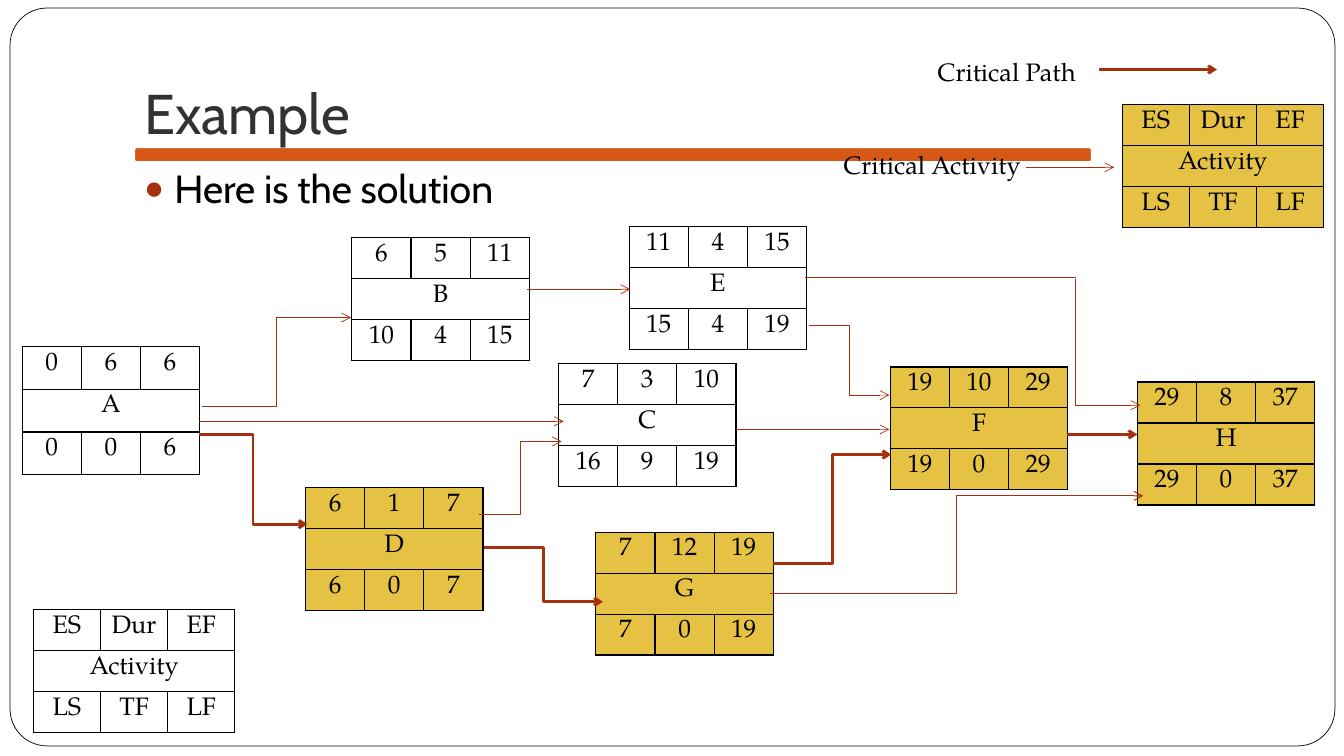
import pptx
import pptx.util
import pptx.dml.color
import pptx.enum.shapes
import pptx.enum.text
import pptx.oxml.ns
import lxml.etree

EMU_PER_PX = 9144
COLORS = {
    "paper": "FFFFFF",
    "ink": "000000",
    "title": "323232",
    "bar": "D55816",
    "path": "A5300F",
    "critical": "E5C243",
}
HEADING_FONT = "Cabin"
DIAGRAM_FONT = "TeX Gyre Pagella"
ALIGN = pptx.enum.text.PP_ALIGN
ANCHOR = pptx.enum.text.MSO_ANCHOR
CONNECTOR = pptx.enum.shapes.MSO_CONNECTOR

LEGEND = (("ES", "Dur", "EF"), "Activity", ("LS", "TF", "LF"))
ACTIVITIES = [
    (22, 344, 176, 127, (0, 6, 6), "A", (0, 0, 6), False),
    (349, 236, 176, 122, (6, 5, 11), "B", (10, 4, 15), False),
    (624, 225, 176, 122, (11, 4, 15), "E", (15, 4, 19), False),
    (554, 361, 176, 122, (7, 3, 10), "C", (16, 9, 19), False),
    (303, 484, 176, 122, (6, 1, 7), "D", (6, 0, 7), True),
    (591, 528, 176, 122, (7, 12, 19), "G", (7, 0, 19), True),
    (883, 364, 176, 122, (19, 10, 29), "F", (19, 0, 29), True),
    (1128, 379, 176, 122, (29, 8, 37), "H", (29, 0, 37), True),
    (33, 605, 200, 122, *LEGEND, False),
    (1113, 104, 200, 122, *LEGEND, True),
]
ELBOWS = [
    (200, 403, 348, 315, 0.5),
    (197, 431, 305, 520, 2),
    (475, 510, 557, 438, 0.5),
    (480, 543, 598, 597, 2),
    (802, 323, 882, 392, 0.5),
    (767, 559, 884, 451, 2),
    (764, 589, 1134, 492, 0.75),
]
ARROWS = [
    (197, 418, 559, 418, 0.5),
    (523, 287, 625, 287, 0.5),
    (730, 426, 882, 426, 0.5),
    (1058, 431, 1128, 431, 2),
    (1066, 402, 1131, 402, 0.5),
    (1090, 69, 1207, 69, 2),
    (1018, 166, 1105, 166, 0.5),
]
PLAIN_LINES = [(798, 275, 1067, 275, 0.5), (1067, 277, 1067, 402, 0.5)]


def px(*lengths):
    return [pptx.util.Emu(length * EMU_PER_PX) for length in lengths]


def rgb(name):
    return pptx.dml.color.RGBColor.from_string(COLORS[name])


def add_xml(parent, tag, **attributes):
    return lxml.etree.SubElement(parent, pptx.oxml.ns.qn(tag), attributes)


def write_text(frame, text, size=18, font=DIAGRAM_FONT, color="ink", align=ALIGN.CENTER):
    paragraph = frame.paragraphs[0]
    paragraph.alignment = align
    run = paragraph.add_run()
    run.text = text
    run.font.size = pptx.util.Pt(size)
    run.font.name = font
    run.font.color.rgb = rgb(color)
    return paragraph


class NetworkSlide:
    def __init__(self, presentation):
        self.slide = presentation.slides.add_slide(presentation.slide_layouts[1])
        self.shapes = self.slide.shapes

    def rounded_box(self, box, fill, line, width, rounding):
        kind = pptx.enum.shapes.MSO_SHAPE.ROUNDED_RECTANGLE
        shape = self.shapes.add_shape(kind, *px(*box))
        shape.shadow.inherit = False
        shape.adjustments[0] = rounding
        shape.fill.solid()
        shape.fill.fore_color.rgb = rgb(fill)
        shape.line.color.rgb = rgb(line)
        shape.line.width = pptx.util.Pt(width)

    def placeholder(self, shape, box, text, anchor, **text_format):
        shape.left, shape.top, shape.width, shape.height = px(*box)
        shape._element.getparent().append(shape._element)
        frame = shape.text_frame
        frame.auto_size = pptx.enum.text.MSO_AUTO_SIZE.NONE
        frame.vertical_anchor = anchor
        paragraph = write_text(frame, text, font=HEADING_FONT, align=ALIGN.LEFT, **text_format)
        return frame, paragraph

    def title(self, box, text):
        frame, paragraph = self.placeholder(
            self.shapes.title, box, text, ANCHOR.BOTTOM, size=40, color="title")
        frame.margin_bottom = px(10)[0]

    def bullet(self, box, text):
        frame, paragraph = self.placeholder(
            self.slide.placeholders[1], box, text, ANCHOR.TOP, size=28)
        paragraph.space_before = pptx.util.Pt(5.8)
        properties = paragraph._p.get_or_add_pPr()
        indent = px(30)[0]
        properties.set("marL", str(indent))
        properties.set("indent", str(-indent))
        add_xml(add_xml(properties, "a:buClr"), "a:srgbClr", val=COLORS["path"])
        add_xml(properties, "a:buSzPct", val="85000")
        add_xml(properties, "a:buChar", char="●")

    def cell(self, cell, text, critical):
        properties = cell._tc.get_or_add_tcPr()
        for side in ("L", "R", "T", "B"):
            border = add_xml(properties, f"a:ln{side}", w=str(pptx.util.Pt(1)))
            add_xml(add_xml(border, "a:solidFill"), "a:srgbClr", val=COLORS["ink"])
        if critical:
            cell.fill.solid()
            cell.fill.fore_color.rgb = rgb("critical")
        else:
            cell.fill.background()
        if text is not None:
            write_text(cell.text_frame, str(text))

    def activity(self, left, top, width, height, early, name, late, critical):
        table = self.shapes.add_table(3, 3, *px(left, top, width, height)).table
        table.first_row = table.horz_banding = False
        for column in table.columns:
            column.width = px(width)[0] // 3
        for row in table.rows:
            row.height = px(height)[0] // 3
        table.cell(1, 0).merge(table.cell(1, 2))
        for row, values in enumerate((early, (name, None, None), late)):
            for column, value in enumerate(values):
                self.cell(table.cell(row, column), value, critical)

    def connector(self, kind, x1, y1, x2, y2, width, arrow=True):
        connector = self.shapes.add_connector(kind, *px(x1, y1, x2, y2))
        connector.line.color.rgb = rgb("path")
        connector.line.width = pptx.util.Pt(width)
        if arrow:
            add_xml(connector.line._get_or_add_ln(), "a:tailEnd", type="arrow")
        add_xml(connector._element.spPr, "a:effectLst")

    def label(self, box, text):
        frame = self.shapes.add_textbox(*px(*box)).text_frame
        frame.word_wrap = True
        frame.vertical_anchor = ANCHOR.MIDDLE
        write_text(frame, text)


def main():
    presentation = pptx.Presentation()
    presentation.slide_width, presentation.slide_height = px(1333, 750)
    network = NetworkSlide(presentation)
    network.rounded_box((10, 8, 1314, 732), "paper", "ink", 0.5, 0.05)
    network.rounded_box((133, 146, 950, 15), "bar", "paper", 1.5, 0.17)
    network.bullet((133, 158, 1133, 500), "Here is the solution")
    network.title((133, 30, 1133, 125), "Example")
    for activity in ACTIVITIES:
        network.activity(*activity)
    for elbow in ELBOWS:
        network.connector(CONNECTOR.ELBOW, *elbow)
    for arrow in ARROWS:
        network.connector(CONNECTOR.STRAIGHT, *arrow)
    for line in PLAIN_LINES:
        network.connector(CONNECTOR.STRAIGHT, *line, arrow=False)
    network.label((882, 51, 233, 40), "Critical Path")
    network.label((808, 143, 233, 40), "Critical Activity")
    presentation.save("out.pptx")


if __name__ == "__main__":
    main()
